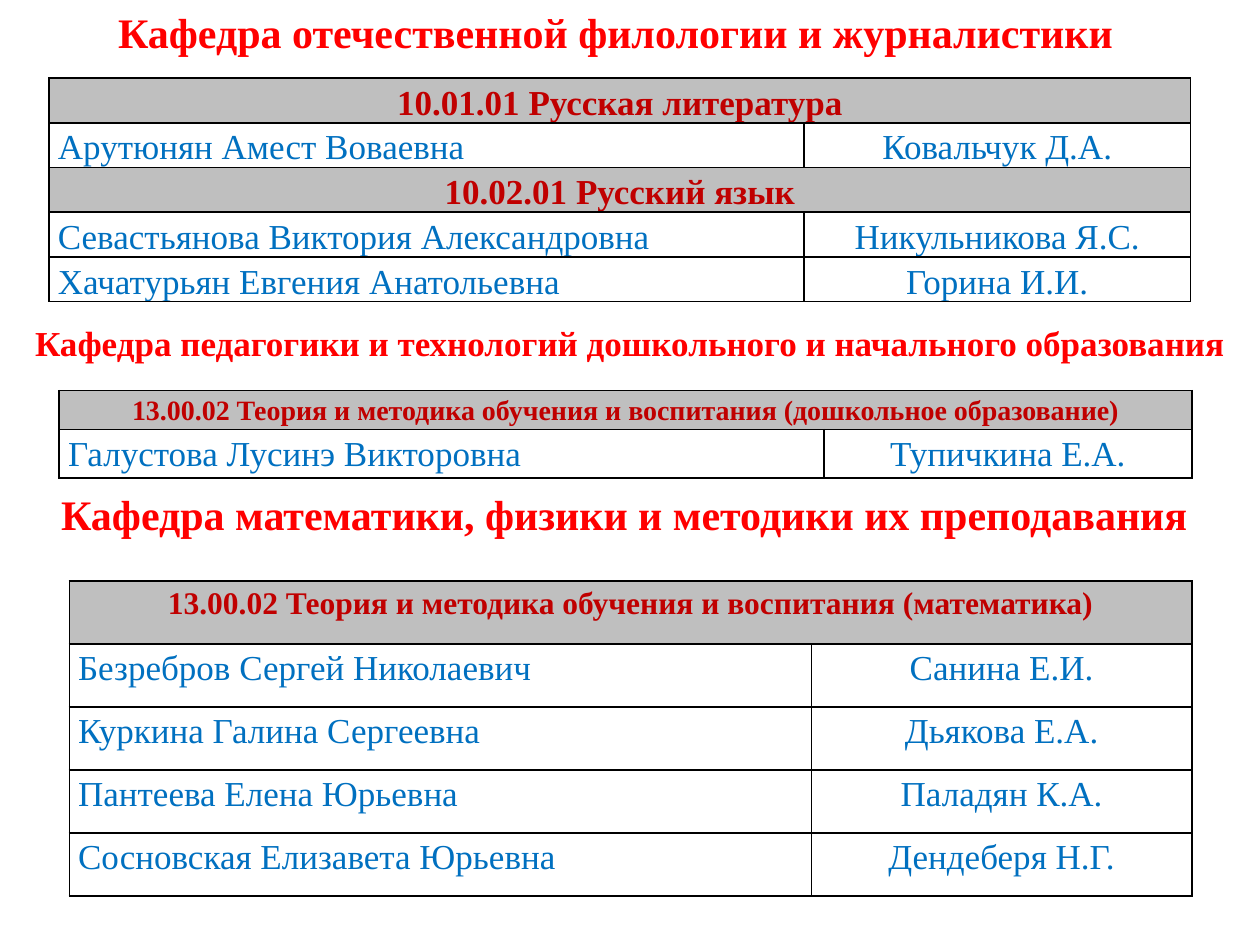
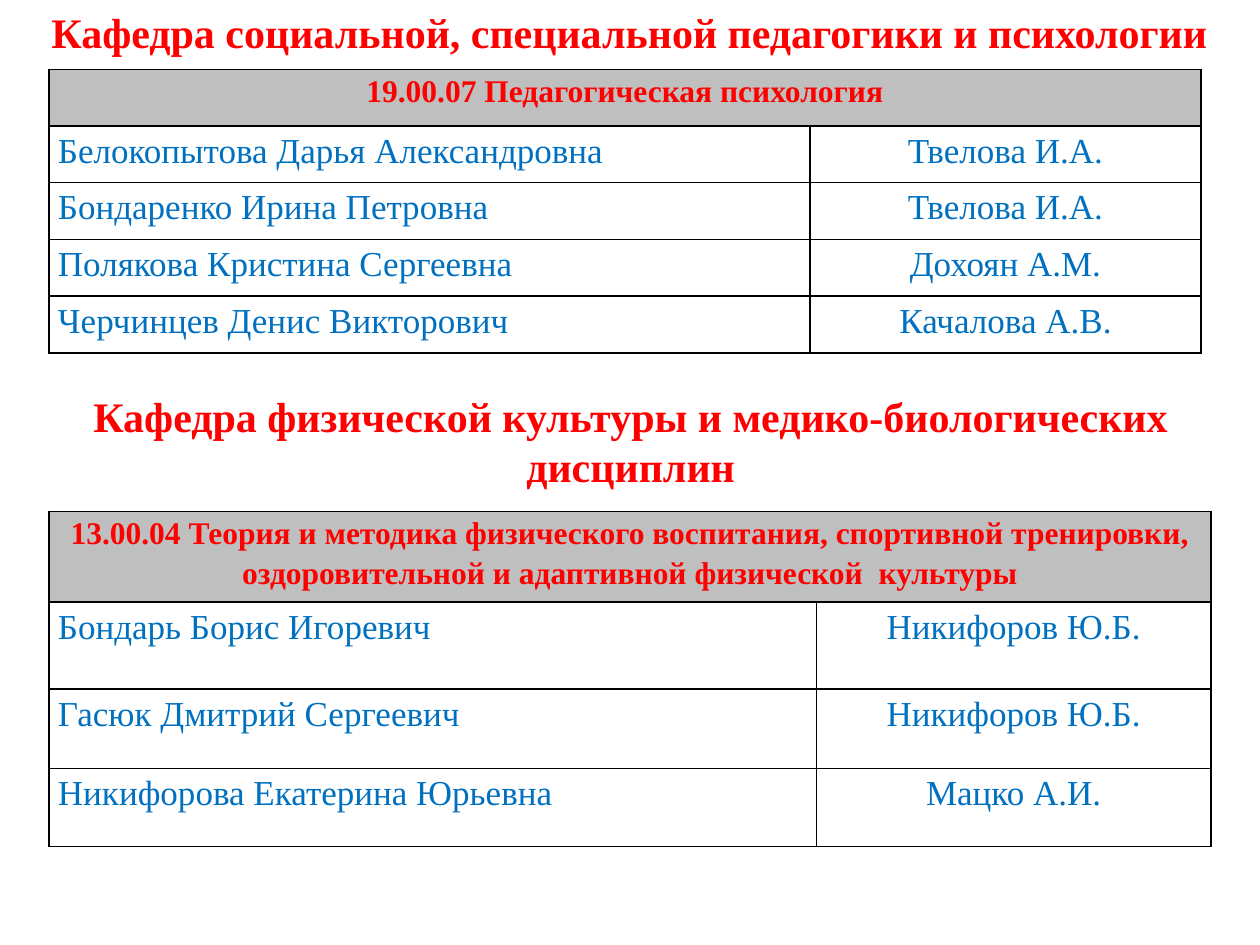
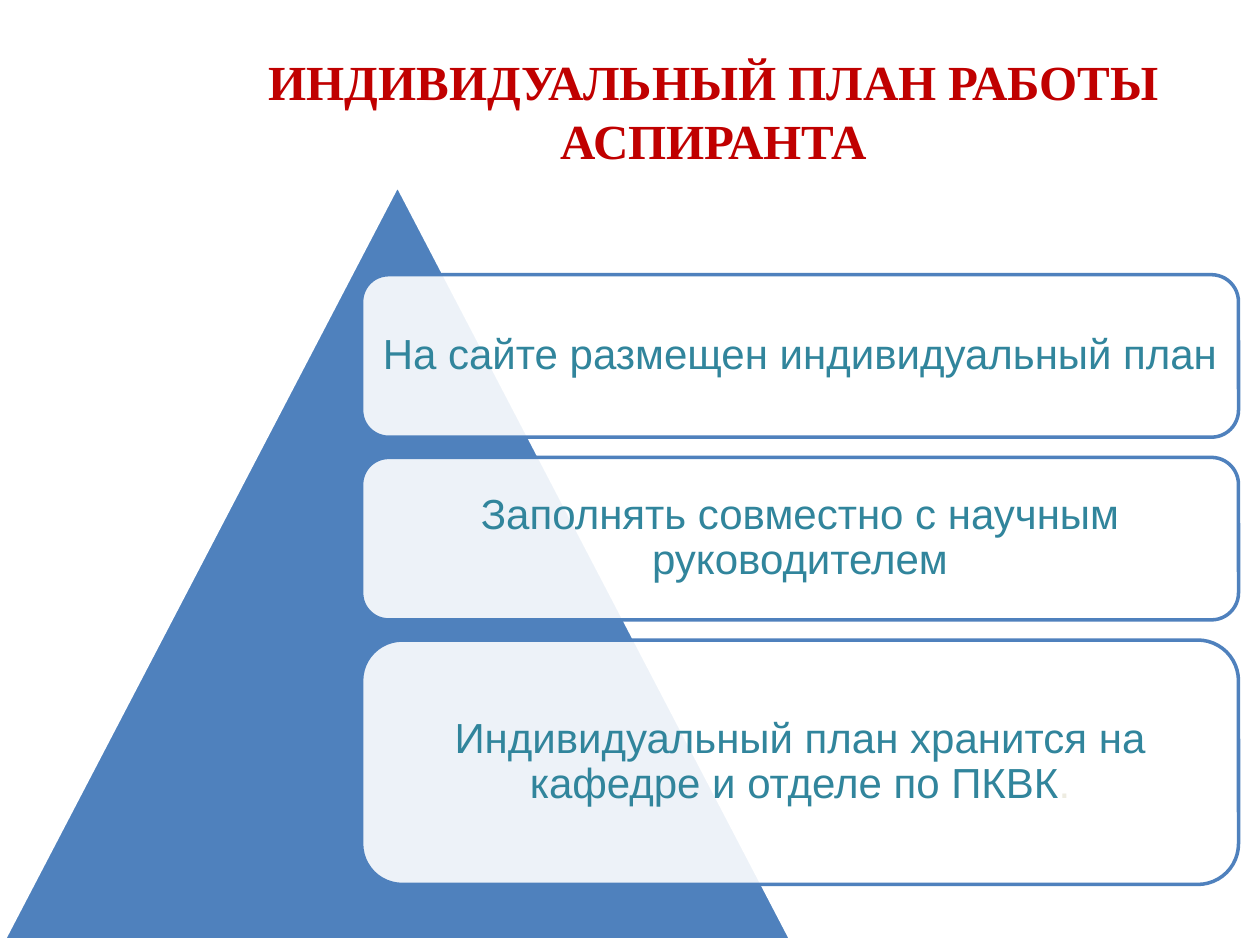
"""Build three slides on postgraduate students and their individual work plan."""
from dataclasses import dataclass

from lxml.etree import SubElement
from pptx import Presentation
from pptx.dml.color import RGBColor
from pptx.enum.shapes import MSO_SHAPE as Preset
from pptx.enum.text import MSO_ANCHOR as Anchor, PP_ALIGN as Align
from pptx.oxml.ns import qn
from pptx.util import Inches, Pt


@dataclass(frozen=True)
class Theme:
    serif: str = "Times New Roman"
    sans: str = "Arial"
    red: str = "FF0000"
    dark_red: str = "C00000"
    blue: str = "0070C0"
    shape_blue: str = "4F81BD"
    teal: str = "31859C"
    cream: str = "EEECE1"
    grey: str = "BFBFBF"
    white: str = "FFFFFF"
    black: str = "000000"
    title: int = 28
    heading: int = 24
    body: int = 20
    subheading: int = 18
    small: int = 16


THEME = Theme()


@dataclass(frozen=True)
class Box:
    left: float
    top: float
    width: float
    height: float

    def lengths(self) -> tuple:
        return tuple(map(Inches, (self.left, self.top, self.width, self.height)))


@dataclass(frozen=True)
class Heading:
    text: str
    box: Box
    size: int = THEME.heading
    align: Align = Align.CENTER


@dataclass(frozen=True)
class Roster:
    """A table of students and supervisors; a row with one item is a speciality."""
    left: float
    top: float
    columns: tuple[float, float]
    heights: tuple[float, ...]
    rows: tuple[tuple[str, ...], ...]
    speciality_size: int = THEME.subheading
    speciality_color: str = THEME.dark_red


@dataclass(frozen=True)
class Card:
    text: str
    height: float
    ending: str = ""


def write(frame, text: str, *, size: int, color: str, font: str = THEME.serif,
          bold: bool = False, align: Align = Align.CENTER, spacing: float = 1.0,
          anchor: Anchor = Anchor.TOP):
    frame.word_wrap = True
    frame.vertical_anchor = anchor
    paragraph = frame.paragraphs[0]
    paragraph.alignment = align
    paragraph.line_spacing = spacing
    add_run(paragraph, text, size=size, color=color, font=font, bold=bold)
    return paragraph


def add_run(paragraph, text: str, *, size: int, color: str, font: str, bold: bool = False) -> None:
    run = paragraph.add_run()
    run.text = text
    run.font.name = font
    run.font.size = Pt(size)
    run.font.bold = bold
    run.font.color.rgb = RGBColor.from_string(color)


def draw_heading(slide, heading: Heading) -> None:
    shape = slide.shapes.add_textbox(*heading.box.lengths())
    write(shape.text_frame, heading.text, size=heading.size, color=THEME.red,
          bold=True, align=heading.align)


def style_cell(cell, fill: str | None) -> None:
    cell.margin_left = cell.margin_right = Inches(0.07)
    cell.margin_top = cell.margin_bottom = 0
    properties = cell._tc.get_or_add_tcPr()
    for side in ("lnL", "lnR", "lnT", "lnB"):
        line = SubElement(properties, qn(f"a:{side}"), w=str(Pt(1)))
        solid = SubElement(line, qn("a:solidFill"))
        SubElement(solid, qn("a:srgbClr"), val=THEME.black)
    if fill:
        cell.fill.solid()
        cell.fill.fore_color.rgb = RGBColor.from_string(fill)
    else:
        cell.fill.background()


def draw_roster(slide, roster: Roster) -> None:
    box = Box(roster.left, roster.top, sum(roster.columns), sum(roster.heights))
    table = slide.shapes.add_table(len(roster.rows), 2, *box.lengths()).table
    table.first_row = table.horz_banding = False
    for column, width in zip(table.columns, roster.columns):
        column.width = Inches(width)
    for index, (texts, height) in enumerate(zip(roster.rows, roster.heights)):
        table.rows[index].height = Inches(height)
        cells = table.cell(index, 0), table.cell(index, 1)
        is_speciality = len(texts) == 1
        for cell in cells:
            style_cell(cell, THEME.grey if is_speciality else None)
        if is_speciality:
            cells[0].merge(cells[1])
            write(cells[0].text_frame, texts[0], size=roster.speciality_size,
                  color=roster.speciality_color, bold=True, spacing=1.15)
        else:
            for cell, text, align in zip(cells, texts, (Align.JUSTIFY, Align.CENTER)):
                write(cell.text_frame, text, size=THEME.body, color=THEME.blue,
                      align=align, spacing=1.15)


def draw_shape(slide, preset: Preset, box: Box, fill: str, line: str):
    shape = slide.shapes.add_shape(preset, *box.lengths())
    shape.shadow.inherit = False
    shape.fill.solid()
    shape.fill.fore_color.rgb = RGBColor.from_string(fill)
    shape.line.color.rgb = RGBColor.from_string(line)
    shape.line.width = Pt(2)
    return shape


def draw_card(slide, card: Card, top: float) -> None:
    shape = draw_shape(slide, Preset.ROUNDED_RECTANGLE, Box(2.87, top, 6.96, card.height),
                       THEME.white, THEME.shape_blue)
    color = shape._element.spPr.find(qn("a:solidFill")).find(qn("a:srgbClr"))
    SubElement(color, qn("a:alpha"), val="90000")
    frame = shape.text_frame
    frame.margin_left = frame.margin_right = Inches(0.03)
    paragraph = write(frame, card.text, size=THEME.heading, color=THEME.teal,
                      font=THEME.sans, spacing=0.9, anchor=Anchor.MIDDLE)
    if card.ending:
        add_run(paragraph, card.ending, size=THEME.heading, color=THEME.cream, font=THEME.sans)


def draw_plan(slide) -> None:
    title = slide.shapes.add_textbox(*Box(1.33, 0.23, 8.67, 1.29).lengths())
    write(title.text_frame, "ИНДИВИДУАЛЬНЫЙ ПЛАН РАБОТЫ АСПИРАНТА", size=THEME.title,
          color=THEME.dark_red, bold=True, anchor=Anchor.MIDDLE)
    draw_shape(slide, Preset.ISOSCELES_TRIANGLE, Box(0.03, 1.47, 6.25, 5.99),
               THEME.shape_blue, THEME.white)
    top, gap = 2.18, 0.16
    for card in PLAN_CARDS:
        draw_card(slide, card, top)
        top += card.height + gap


DEPARTMENT_SLIDES = (
    (
        Roster(0.39, 0.62, (5.99, 3.07), (0.35,) * 5, (
            ("10.01.01 Русская литература",),
            ("Арутюнян Амест Воваевна", "Ковальчук Д.А."),
            ("10.02.01 Русский язык",),
            ("Севастьянова Виктория Александровна", "Никульникова Я.С."),
            ("Хачатурьян Евгения Анатольевна", "Горина И.И."),
        ), speciality_size=THEME.body),
        Heading("Кафедра отечественной филологии и журналистики", Box(0, 0, 9.77, 0.91)),
        Roster(0.47, 3.1, (6.07, 2.92), (0.31, 0.38), (
            ("13.00.02 Теория и методика обучения и воспитания (дошкольное образование)",),
            ("Галустова Лусинэ Викторовна", "Тупичкина Е.А."),
        ), speciality_size=THEME.small),
        Heading("Кафедра педагогики и технологий дошкольного и начального образования",
                Box(0, 2.5, 10, 0.44), size=THEME.body),
        Roster(0.55, 4.61, (5.89, 3.02), (0.5,) * 5, (
            ("13.00.02 Теория и методика обучения и воспитания (математика)",),
            ("Безребров Сергей Николаевич", "Санина Е.И."),
            ("Куркина Галина Сергеевна", "Дьякова Е.А."),
            ("Пантеева Елена Юрьевна", "Паладян К.А."),
            ("Сосновская Елизавета Юрьевна", "Дендеберя Н.Г."),
        )),
        Heading("Кафедра математики, физики и методики их преподавания",
                Box(0.23, 3.83, 9.45, 0.5)),
    ),
    (
        Heading("Кафедра социальной, специальной педагогики и психологии",
                Box(0.31, 0, 9.53, 0.81), align=Align.LEFT),
        Roster(0.39, 0.55, (6.04, 3.1), (0.45,) * 5, (
            ("19.00.07 Педагогическая психология",),
            ("Белокопытова Дарья Александровна", "Твелова И.А."),
            ("Бондаренко Ирина Петровна", "Твелова И.А."),
            ("Полякова Кристина Сергеевна", "Дохоян А.М."),
            ("Черчинцев Денис Викторович", "Качалова А.В."),
        ), speciality_color=THEME.red),
        Heading("Кафедра физической культуры и медико-биологических дисциплин",
                Box(0.16, 3.05, 9.69, 0.91)),
        Roster(0.39, 4.06, (6.09, 3.13), (0.72, 0.69, 0.63, 0.62), (
            ("13.00.04 Теория и методика физического воспитания, спортивной тренировки, "
             "оздоровительной и адаптивной физической  культуры",),
            ("Бондарь Борис Игоревич", "Никифоров Ю.Б."),
            ("Гасюк Дмитрий Сергеевич", "Никифоров Ю.Б."),
            ("Никифорова Екатерина Юрьевна", "Мацко А.И."),
        ), speciality_color=THEME.red),
    ),
)

PLAN_CARDS = (
    Card("На сайте размещен индивидуальный план", 1.29),
    Card("Заполнять совместно с научным руководителем", 1.29),
    Card("Индивидуальный план хранится на кафедре и отделе по ПКВК", 1.94, ending="."),
)


def main() -> None:
    presentation = Presentation()
    presentation.slide_width, presentation.slide_height = Inches(10), Inches(7.5)
    blank = presentation.slide_layouts[6]
    for parts in DEPARTMENT_SLIDES:
        slide = presentation.slides.add_slide(blank)
        for part in parts:
            draw = draw_roster if isinstance(part, Roster) else draw_heading
            draw(slide, part)
    draw_plan(presentation.slides.add_slide(blank))
    presentation.save("out.pptx")


if __name__ == "__main__":
    main()
